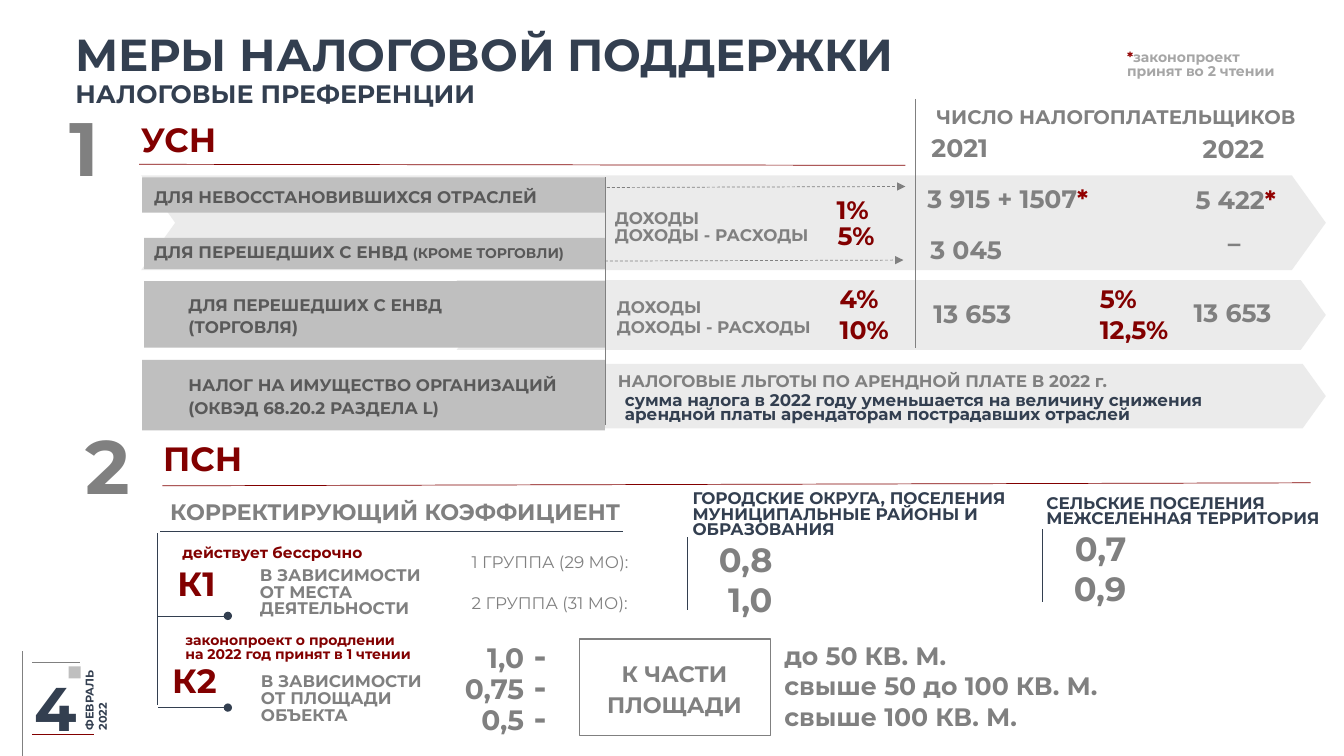
import pptx
import pptx.util
import pptx.dml.color
import pptx.enum.dml
import pptx.enum.shapes
import pptx.enum.text
import pptx.oxml
import pptx.oxml.ns
import lxml.etree

THEME = {
    "font": "Montserrat",
    "colors": {
        "navy": "333F50", "red": "820000", "star": "920000", "gray": "808080",
        "dark": "595959", "pale": "A6A6A6", "bar": "BFBFBF", "band": "D9D9D9",
        "white": "FFFFFF",
    },
    "sizes": {
        "number": 54, "page": 44, "title": 32, "heading": 24, "factor": 20,
        "value": 18, "subhead": 16, "caption": 14, "body": 12, "remark": 11,
        "note": 10, "date": 8,
    },
}
CM_PER_INCH = 2.54
BAND_POINT = 0.359

BANDS = [(1.4, 1.74, 11.75, 0.94), (4.53, 2.78, 8.62, 0.69), (5.75, 3.61, 7.4, 0.64)]
BARS = [(1.41, 1.76, 4.6, 0.35), (1.43, 2.36, 4.57, 0.31),
        (1.43, 2.79, 4.57, 0.66), (1.41, 3.57, 4.59, 0.7)]
AREA_FRAME = (5.75, 6.34, 1.89, 0.96)
PAGE_MARK = (0.68, 6.61, 0.12, 0.12)

RULES = [
    ((1.38, 1.63), (8.98, 1.64), "red", None),
    ((1.61, 4.82), (13, 4.79), "red", None),
    ((1.56, 5.29), (1.56, 6.99), "navy", None),
    ((1.59, 5.27), (6.18, 5.27), "navy", None),
    ((1.57, 6.11), (2.26, 6.11), "navy", "oval"),
    ((1.57, 7.02), (2.26, 7.02), "navy", "oval"),
    ((6.82, 5.33), (6.82, 6.05), "navy", None),
    ((10.34, 5.25), (10.34, 5.97), "navy", None),
    ((6, 1.76), (6, 4.22), "gray", None),
    ((9.08, 0.98), (9.08, 3.45), "gray", None),
    ((6.02, 1.86), (8.98, 1.85), "gray", "triangle"),
    ((6, 2.59), (8.96, 2.58), "gray", "triangle"),
    ((0.22, 6.46), (0.22, 7.5), "gray", None),
    ((0.79, 6.57), (0.32, 6.57), "gray", None),
    ((0.93, 7.29), (0.32, 7.29), "red", None),
]

STAR = ("*", {"color": "star"})
DASH = (" -", {"size": "heading"})
FREE = {"anchor": "TOP", "wrap": False}
TOP = {"anchor": "TOP"}
RIGHT = {"align": "RIGHT"}

TEXTS = [
    ((0.65, 0.16, 8.89, 0.74), "title", "navy", None, ["МЕРЫ НАЛОГОВОЙ ПОДДЕРЖКИ"], {}),
    ((0.65, 0.67, 4.46, 0.5), "value", "navy", 22, ["НАЛОГОВЫЕ ПРЕФЕРЕНЦИИ"], {}),
    ((11.08, 0.46, 2.07, 0.37), "note", "pale", 10,
     [[STAR, "законопроект"], "принят во 2 чтении"], {}),
    ((0.59, 1.16, 0.91, 1.04), "number", "gray", 32, ["1"], {}),
    ((1.3, 1.25, 4.84, 0.35), "heading", "red", 22, ["УСН"], {}),
    ((9.19, 0.95, 3.9, 0.53), "caption", "gray", 9, ["ЧИСЛО НАЛОГОПЛАТЕЛЬЩИКОВ"], {}),
    ((9.14, 1.26, 0.88, 0.41), "value", "gray", 22, ["2021"], FREE),
    ((11.83, 1.27, 0.88, 0.4), "value", "gray", 22, ["2022"], FREE),
    ((1.43, 1.74, 5.47, 0.42), "body", "dark", 14, ["ДЛЯ НЕВОССТАНОВИВШИХСЯ ОТРАСЛЕЙ"], {}),
    ((1.43, 2.34, 5.76, 0.37), "body", "dark", 10,
     [["ДЛЯ ПЕРЕШЕДШИХ С ЕНВД ", ("(КРОМЕ ТОРГОВЛИ)", {"size": "note"})]], {}),
    ((6, 1.96, 2.48, 0.3), "body", "gray", 22, ["ДОХОДЫ"], {}),
    ((6, 1.93, 2.26, 0.81), "body", "gray", 14, ["ДОХОДЫ - РАСХОДЫ"], {}),
    ((8.2, 1.95, 1.27, 0.26), "value", "red", None, ["1%"], {}),
    ((8.21, 2.21, 1.27, 0.26), "value", "red", None, ["5%"], {}),
    ((9.1, 1.76, 3.62, 1.84), "value", "gray", 22, [["3 915 + 1507", STAR]], TOP),
    ((11.76, 1.77, 1.63, 1.84), "value", "gray", 22, [["5 422", STAR]], TOP),
    ((9.13, 2.27, 0.96, 0.41), "value", "gray", 22, ["3 045"], FREE),
    ((12.08, 2.21, 0.38, 0.4), "value", "gray", None, ["–"], TOP),
    ((1.77, 2.94, 3.15, 0.36), "body", "dark", 16, ["ДЛЯ ПЕРЕШЕДШИХ С ЕНВД (ТОРГОВЛЯ)"], {}),
    ((6.02, 3.01, 2.79, 0.27), "body", "gray", None, ["ДОХОДЫ", "ДОХОДЫ - РАСХОДЫ"], {}),
    ((8.23, 2.97, 1.15, 0.29), "value", "red", None, ["4%", "10%"], {}),
    ((10.81, 2.94, 1.08, 0.35), "value", "red", None, ["5%", "12,5%"], {}),
    ((9.16, 2.91, 2.05, 0.4), "value", "gray", 22, ["13 653"], FREE),
    ((11.74, 2.89, 1.13, 0.4), "value", "gray", 22, ["13 653"], FREE),
    ((1.77, 3.74, 4.34, 0.36), "body", "dark", 16,
     ["НАЛОГ НА ИМУЩЕСТВО ОРГАНИЗАЦИЙ", "(ОКВЭД 68.20.2 РАЗДЕЛА L)"], {}),
    ((6.03, 3.58, 5.4, 0.3), "body", "gray", 22,
     ["НАЛОГОВЫЕ ЛЬГОТЫ ПО АРЕНДНОЙ ПЛАТЕ В 2022 г."], {}),
    ((6.1, 3.85, 6.59, 0.43), "body", "navy", 10,
     ["сумма налога в 2022 году уменьшается на величину снижения "
      "арендной платы арендаторам пострадавших отраслей"], {}),
    ((0.75, 4.32, 0.91, 1.03), "number", "gray", 32, ["2"], {}),
    ((1.52, 4.42, 4.84, 0.35), "heading", "red", 22, ["ПСН"], {}),
    ((1.59, 4.91, 5.33, 0.37), "subhead", "gray", 16, ["КОРРЕКТИРУЮЩИЙ КОЭФФИЦИЕНТ"], {}),
    ((6.77, 4.87, 3.49, 0.5), "body", "navy", 11,
     ["ГОРОДСКИЕ ОКРУГА, ПОСЕЛЕНИЯ", "МУНИЦИПАЛЬНЫЕ РАЙОНЫ И ОБРАЗОВАНИЯ"], {}),
    ((10.28, 4.88, 3.06, 0.41), "body", "navy", 11,
     ["СЕЛЬСКИЕ ПОСЕЛЕНИЯ", "МЕЖСЕЛЕННАЯ ТЕРРИТОРИЯ"], {}),
    ((1.71, 5.34, 2.06, 0.29), "remark", "red", None, ["действует бессрочно"], FREE),
    ((1.66, 5.66, 1.11, 0.35), "heading", "red", 22, ["К1"], {}),
    ((2.48, 5.61, 2.63, 0.55), "body", "gray", 12,
     ["В ЗАВИСИМОСТИ", "ОТ МЕСТА", "ДЕЯТЕЛЬНОСТИ"], {}),
    ((4.58, 5.37, 2.05, 0.41), "body", "gray", None, ["1 ГРУППА (29 МО):"], {"bold": False}),
    ((4.58, 5.77, 2.05, 0.41), "body", "gray", None, ["2 ГРУППА (31 МО):"], {"bold": False}),
    ((6.95, 5.48, 0.81, 0.53), "heading", "gray", None, ["0,8", "1,0"], RIGHT),
    ((10.46, 5.24, 0.81, 0.79), "heading", "gray", None, ["0,7", "0,9"], RIGHT),
    ((1.74, 6.3, 3.05, 0.27), "note", "red", 10,
     ["законопроект о продлении", "на 2022 год принят в 1 чтении"], {}),
    ((1.61, 6.62, 0.98, 0.35), "heading", "red", 22, ["К2"], {}),
    ((2.49, 6.63, 2.05, 0.62), "body", "gray", 12, ["В ЗАВИСИМОСТИ", "ОТ ПЛОЩАДИ ОБЪЕКТА"], {}),
    ((4.2, 6.59, 1.51, 0.53), "factor", "gray", 22,
     [["1,0", DASH], ["0,75", DASH], ["0,5", DASH]],
     {"align": "RIGHT", "first_right_indent": 0.19}),
    ((5.76, 6.61, 1.86, 0.42), "subhead", "gray", 22, ["К ЧАСТИ ПЛОЩАДИ"], {"align": "CENTER"}),
    ((7.68, 6.29, 4.55, 1.02), "value", "gray", 22,
     ["до 50 КВ. М.", "свыше 50 до 100 КВ. М.", "свыше 100 КВ. М."], {}),
    ((0.5, 6.62, 0.9, 0.55), "date", "navy", None, ["ФЕВРАЛЬ 2022"], {"rotation": 270}),
    ((0.24, 6.74, 0.69, 0.55), "page", "navy", None, ["4"], {}),
]


def length(inches):
    return pptx.util.Cm(inches * CM_PER_INCH)


def color(name):
    return pptx.dml.color.RGBColor.from_string(THEME["colors"][name])


def add_block(page, kind, place, fill, line=None, point=None, opacity=None):
    shape = page.shapes.add_shape(kind, *map(length, place))
    shape.shadow.inherit = False
    shape.fill.solid()
    shape.fill.fore_color.rgb = color(fill)
    if point is not None:
        shape.adjustments[0] = point
    if opacity is not None:
        tint = shape.fill._xPr.find(".//" + pptx.oxml.ns.qn("a:srgbClr"))
        lxml.etree.SubElement(tint, pptx.oxml.ns.qn("a:alpha"), val=str(opacity * 1000))
    if line:
        shape.line.color.rgb = color(line)
        shape.line.width = pptx.util.Pt(1)
    else:
        shape.line.fill.background()


def add_rule(page, start, end, tone, tail):
    straight = pptx.enum.shapes.MSO_CONNECTOR.STRAIGHT
    rule = page.shapes.add_connector(straight, *map(length, start + end))
    rule.line.color.rgb = color(tone)
    rule.line.width = pptx.util.Pt(0.5)
    if tail == "triangle":
        rule.line.dash_style = pptx.enum.dml.MSO_LINE.DASH
    if tail:
        outline = rule.line._get_or_add_ln()
        lxml.etree.SubElement(outline, pptx.oxml.ns.qn("a:tailEnd"), type=tail)
    lxml.etree.SubElement(rule._element.spPr, pptx.oxml.ns.qn("a:effectLst"))


def add_text(page, place, size, tone, spacing, paragraphs, options):
    box = page.shapes.add_textbox(*map(length, place))
    box.rotation = options.get("rotation", 0)
    frame = box.text_frame
    frame.word_wrap = options.get("wrap", True)
    if not frame.word_wrap:
        frame.auto_size = pptx.enum.text.MSO_AUTO_SIZE.SHAPE_TO_FIT_TEXT
    frame.vertical_anchor = pptx.enum.text.MSO_ANCHOR[options.get("anchor", "MIDDLE")]
    for index, runs in enumerate(paragraphs):
        para = frame.add_paragraph() if index else frame.paragraphs[0]
        para.alignment = pptx.enum.text.PP_ALIGN[options.get("align", "LEFT")]
        if spacing:
            para.line_spacing = pptx.util.Pt(spacing)
        if index == 0 and "first_right_indent" in options:
            para._p.get_or_add_pPr().set("marR", str(length(options["first_right_indent"])))
        for run in [runs] if isinstance(runs, str) else runs:
            words, change = (run, {}) if isinstance(run, str) else run
            span = para.add_run()
            span.text = words
            span.font.name = THEME["font"]
            span.font.size = pptx.util.Pt(THEME["sizes"][change.get("size", size)])
            span.font.bold = options.get("bold", True)
            span.font.color.rgb = color(change.get("color", tone))


def main():
    deck = pptx.Presentation()
    deck.slide_width, deck.slide_height = length(13.33), length(7.5)
    page = deck.slides.add_slide(deck.slide_layouts[6])
    kinds = pptx.enum.shapes.MSO_SHAPE
    for place in BANDS:
        add_block(page, kinds.CHEVRON, place, "band", point=BAND_POINT, opacity=50)
    for place in BARS:
        add_block(page, kinds.CHEVRON, place, "bar", point=0)
    add_block(page, kinds.CHEVRON, AREA_FRAME, "white", line="gray", point=0)
    add_block(page, kinds.RECTANGLE, PAGE_MARK, "bar")
    for rule in RULES:
        add_rule(page, *rule)
    for text in TEXTS:
        add_text(page, *text)
    deck.save("out.pptx")


if __name__ == "__main__":
    main()
